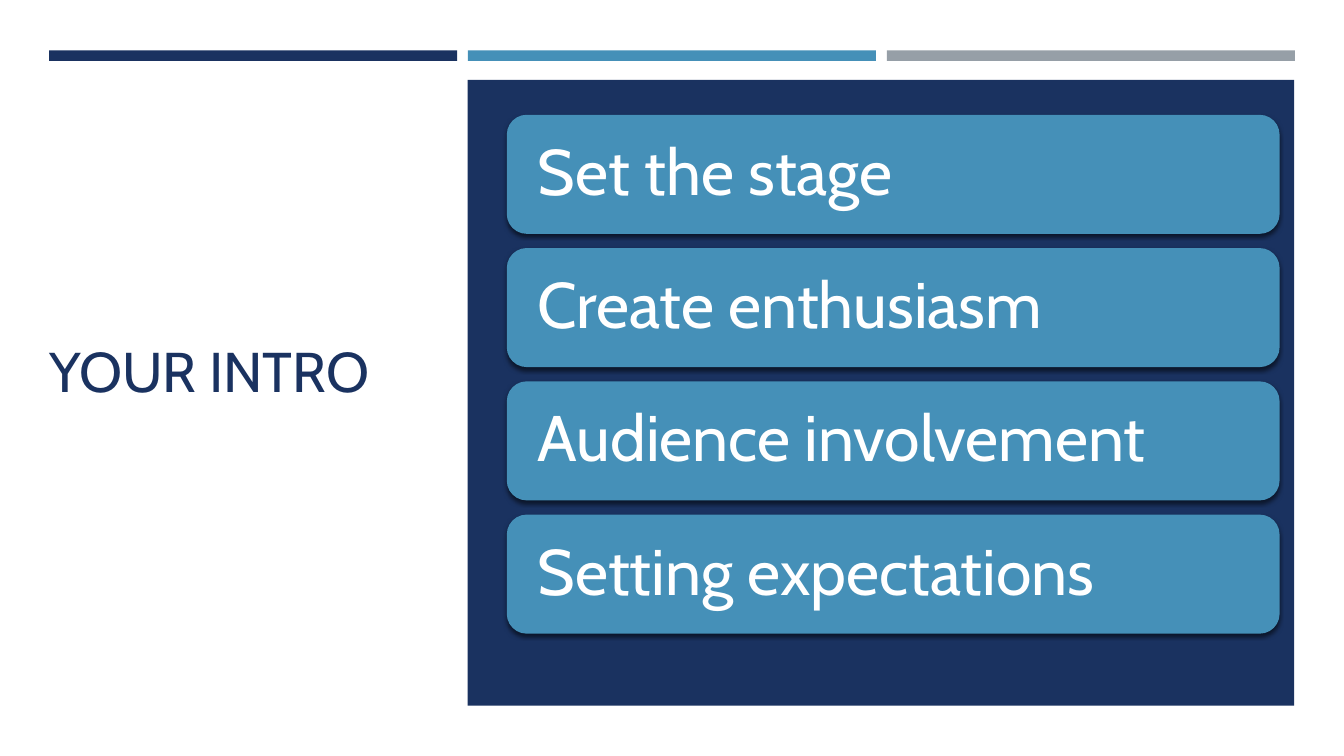
from lxml import etree
from pptx import Presentation
from pptx.dml.color import RGBColor
from pptx.enum.shapes import MSO_SHAPE
from pptx.enum.text import MSO_ANCHOR, PP_ALIGN
from pptx.oxml.ns import qn
from pptx.util import Pt

RECTANGLE = MSO_SHAPE.RECTANGLE
ROUNDED = MSO_SHAPE.ROUNDED_RECTANGLE
MIDDLE = MSO_ANCHOR.MIDDLE
LEFT = PP_ALIGN.LEFT

NAVY, BLUE, GREY, WHITE = "1A3260", "4590B8", "969FA7", "FFFFFF"
TOPICS = ["Set the stage", "Create enthusiasm",
          "Audience involvement", "Setting expectations"]


def colour(value):
    return RGBColor.from_string(value)


class SlideBuilder:
    font = "Cabin"

    def __init__(self, page):
        self.page = page
        page.background.fill.solid()
        page.background.fill.fore_color.rgb = colour(WHITE)

    def block(self, kind, left, top, width, height, fill):
        box = self.page.shapes.add_shape(
            kind, Pt(left), Pt(top), Pt(width), Pt(height))
        box.shadow.inherit = False
        box.fill.solid()
        box.fill.fore_color.rgb = colour(fill)
        box.line.fill.background()
        return box

    def label(self, box, text, size, shade, inset):
        frame = box.text_frame
        frame.word_wrap = True
        frame.vertical_anchor = MIDDLE
        frame.margin_left = frame.margin_right = Pt(inset)
        para = frame.paragraphs[0]
        para.alignment = LEFT
        para.line_spacing = 0.9
        span = para.add_run()
        span.text = text
        span.font.name = self.font
        span.font.size = Pt(size)
        span.font.color.rgb = colour(shade)

    def title(self, text, left, top, width, height):
        box = self.page.shapes.title
        box.left, box.top = Pt(left), Pt(top)
        box.width, box.height = Pt(width), Pt(height)
        self.label(box, text, 40, NAVY, 7.2)

    def card(self, text, left, top, width, height):
        box = self.block(ROUNDED, left, top, width, height, BLUE)
        self.drop_shadow(box)
        self.label(box, text, 46, WHITE, 18)

    def drop_shadow(self, box):
        effects = box.element.spPr.find(qn("a:effectLst"))
        shadow = etree.SubElement(
            effects, qn("a:outerShdw"), blurRad=str(Pt(3)), dist=str(Pt(2)),
            dir="5400000", algn="ctr", rotWithShape="0")
        black = etree.SubElement(shadow, qn("a:srgbClr"), val="000000")
        etree.SubElement(black, qn("a:alpha"), val="55000")


def main():
    deck = Presentation()
    deck.slide_width, deck.slide_height = Pt(960), Pt(540)
    slide = SlideBuilder(deck.slides.add_slide(deck.slide_layouts[5]))

    slide.block(RECTANGLE, 334, 57, 590.5, 447, NAVY)
    for index, fill in enumerate([NAVY, BLUE, GREY]):
        slide.block(RECTANGLE, 35 + index * 299.2, 36, 291.5, 7.5, fill)

    slide.title("YOUR INTRO", 28, 82, 271.5, 371)
    for index, topic in enumerate(TOPICS):
        slide.card(topic, 362, 82 + index * 95.2, 552, 85)

    deck.save("out.pptx")


if __name__ == "__main__":
    main()
